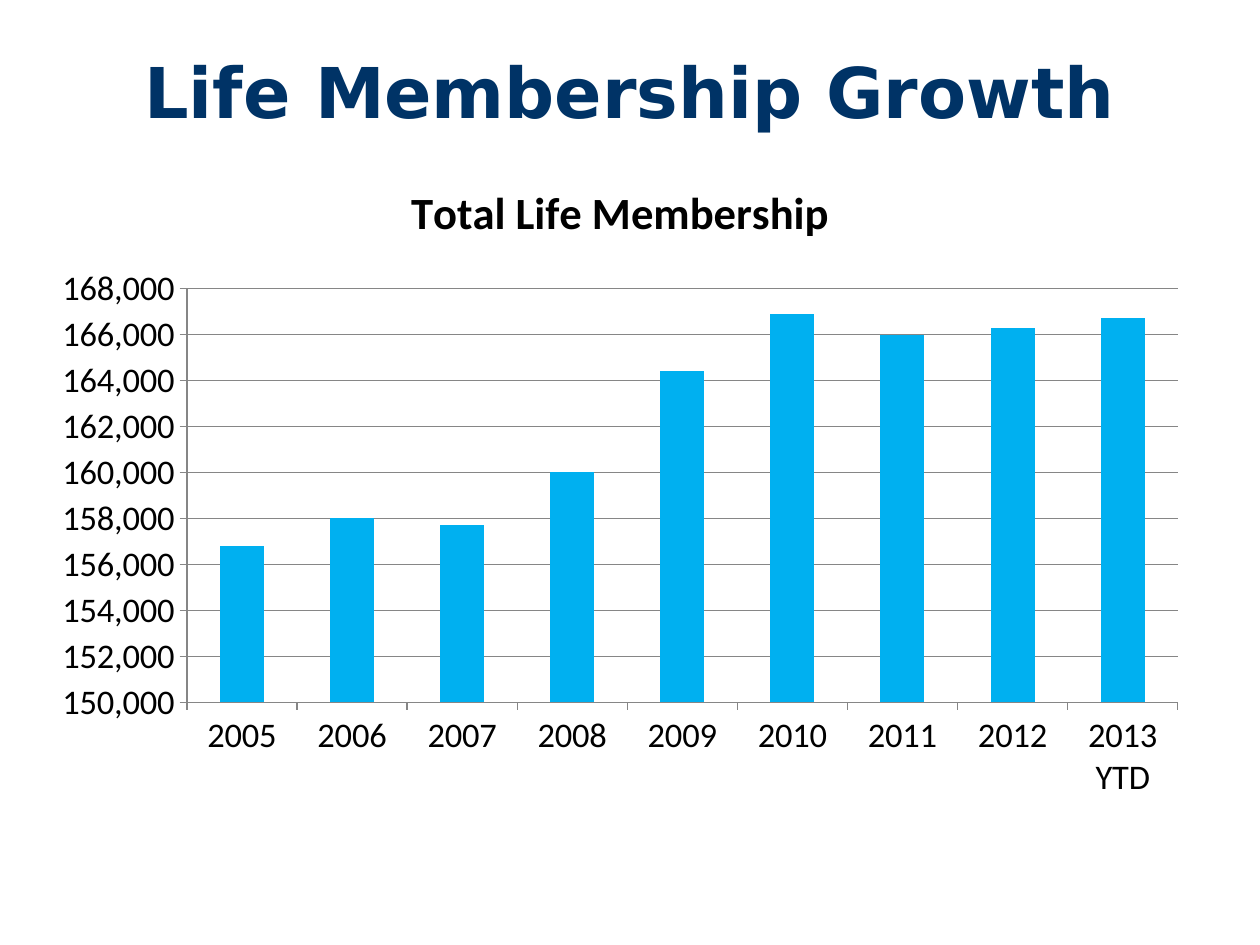
from dataclasses import dataclass

from pptx import Presentation
from pptx.chart.data import CategoryChartData
from pptx.dml.color import RGBColor
from pptx.enum.chart import XL_CHART_TYPE, XL_TICK_MARK
from pptx.enum.text import MSO_ANCHOR, PP_ALIGN
from pptx.util import Pt

COLUMNS = XL_CHART_TYPE.COLUMN_CLUSTERED
TICK_OUT, TICK_NONE = XL_TICK_MARK.OUTSIDE, XL_TICK_MARK.NONE
TOP, CENTER = MSO_ANCHOR.TOP, PP_ALIGN.CENTER
EMU_PER_PX = 914400 / 126

MEMBERSHIP = {
    "2005": 156800,
    "2006": 158000,
    "2007": 157700,
    "2008": 160000,
    "2009": 164400,
    "2010": 166900,
    "2011": 166000,
    "2012": 166300,
    "2013 YTD": 166700,
}


@dataclass(frozen=True)
class Theme:
    """Colours, fonts and type sizes of the slide."""
    navy: str = "003366"
    bar: str = "00B0F0"
    ink: str = "000000"
    rule: str = "868686"
    title_font: str = "DejaVu Sans"
    chart_font: str = "Calibri"
    title_size: float = 40
    heading_size: float = 25.5
    label_size: float = 19.7


THEME = Theme()


def px(length):
    """Turn pixels into EMU."""
    return round(length * EMU_PER_PX)


def style_font(font, face, size, color, bold=False):
    """Set the face, size, colour and weight of a font."""
    font.name = face
    font.size = Pt(size)
    font.bold = bold
    font.color.rgb = RGBColor.from_string(color)


def write_text(frame, text, align=CENTER, **font_format):
    """Put one formatted paragraph into a text frame."""
    frame.text = text
    paragraph = frame.paragraphs[0]
    paragraph.alignment = align
    style_font(paragraph.runs[0].font, **font_format)


def style_line(line):
    """Give a chart line the thin grey rule."""
    line.color.rgb = RGBColor.from_string(THEME.rule)
    line.width = Pt(0.75)


def place_title(slide, text, left, top, width, height):
    """Move and fill the title placeholder."""
    title = slide.shapes.title
    title.left, title.top = px(left), px(top)
    title.width, title.height = px(width), px(height)
    title.text_frame.word_wrap = True
    title.text_frame.vertical_anchor = TOP
    write_text(title.text_frame, text, face=THEME.title_font,
               size=THEME.title_size, color=THEME.navy, bold=True)


def style_axis(axis):
    """Format the line, ticks and labels of an axis."""
    axis.major_tick_mark = TICK_OUT
    axis.minor_tick_mark = TICK_NONE
    style_line(axis.format.line)
    style_font(axis.tick_labels.font, THEME.chart_font, THEME.label_size, THEME.ink)


def add_column_chart(slide, heading, values, left, top, width, height):
    """Add a single-series column chart with a heading."""
    chart_data = CategoryChartData(number_format="#,##0")
    chart_data.categories = list(values)
    chart_data.add_series(heading, list(values.values()))
    chart = slide.shapes.add_chart(
        COLUMNS, px(left), px(top), px(width), px(height), chart_data).chart
    style_font(chart.font, THEME.chart_font, THEME.label_size, THEME.ink)
    chart.has_legend = False
    chart.has_title = True
    chart.chart_title.include_in_layout = False
    write_text(chart.chart_title.text_frame, heading, face=THEME.chart_font,
               size=THEME.heading_size, color=THEME.ink, bold=True)

    columns = chart.plots[0]
    columns.gap_width = 150
    columns.vary_by_categories = False
    bar_fill = columns.series[0].format.fill
    bar_fill.solid()
    bar_fill.fore_color.rgb = RGBColor.from_string(THEME.bar)

    style_axis(chart.category_axis)
    member_axis = chart.value_axis
    style_axis(member_axis)
    member_axis.minimum_scale, member_axis.maximum_scale = 150000, 168000
    member_axis.major_unit = 2000
    member_axis.tick_labels.number_format = "#,##0"
    member_axis.tick_labels.number_format_is_linked = False
    member_axis.has_major_gridlines = True
    style_line(member_axis.major_gridlines.format.line)


def main():
    """Build the membership slide."""
    deck = Presentation()
    deck.slide_width, deck.slide_height = px(1260), px(945)
    slide = deck.slides.add_slide(deck.slide_layouts[5])
    place_title(slide, "Life Membership Growth", 94, 42, 1071, 168)
    add_column_chart(slide, "Total Life Membership", MEMBERSHIP, 39, 154, 1162, 658)
    deck.save("out.pptx")


if __name__ == "__main__":
    main()
